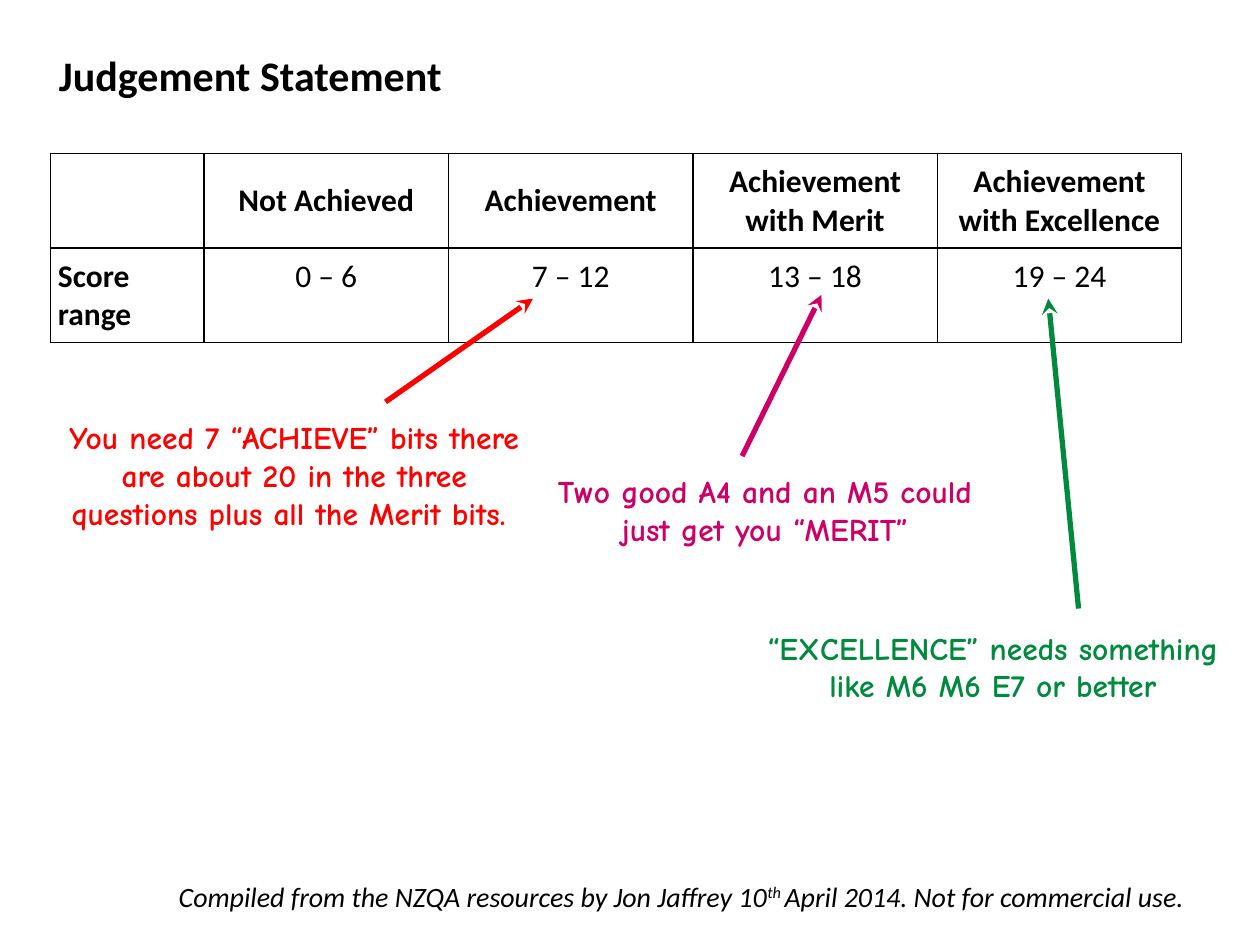
from lxml.etree import SubElement
from pptx import Presentation
from pptx.dml.color import RGBColor
from pptx.enum.shapes import MSO_CONNECTOR
from pptx.enum.text import MSO_ANCHOR, PP_ALIGN
from pptx.oxml.ns import qn
from pptx.util import Inches, Pt

BLACK = "000000"
TITLE = "Judgement Statement"
GRADES = [
    ("", "Score range"),
    ("Not Achieved", "0 – 6"),
    ("Achievement", "7 – 12"),
    ("Achievement with Merit", "13 – 18"),
    ("Achievement with Excellence", "19 – 24"),
]
COLUMN_WIDTHS = [1.22] + [1.94] * 4
ROW_HEIGHT = 0.74
# text, colour, text box, arrow start, arrow tip
COMMENTS = [
    ("You need 7 “ACHIEVE” bits there are about 20 in the three questions plus all the Merit bits. ",
     "FF0000", (0.35, 3.27, 3.97, 1.31), (3.06, 3.19), (4.23, 2.37)),
    ("Two good A4 and an M5 could just get you “MERIT”",
     "CC0066", (4.3, 3.7, 3.54, 1.01), (5.89, 3.62), (6.52, 2.34)),
    ("“EXCELLENCE” needs something like M6 M6 E7 or better",
     "008A3E", (5.96, 4.94, 3.84, 1.01), (8.56, 4.83), (8.32, 2.37)),
]
# text, superscript
CREDIT = [
    ("Compiled from the NZQA resources by Jon Jaffrey 10", False),
    ("th ", True),
    ("April 2014. Not for commercial use.", False),
]


def rgb(color):
    return RGBColor.from_string(color)


def add_run(p, text, size, color=BLACK, font="Calibri", bold=False, italic=False):
    r = p.add_run()
    r.text = text
    f = r.font
    f.name, f.size, f.bold, f.italic = font, Pt(size), bold, italic
    f.color.rgb = rgb(color)
    return r


def add_text_box(s, box, wrap=True):
    tf = s.shapes.add_textbox(*map(Inches, box)).text_frame
    tf.word_wrap = wrap
    return tf


def add_arrow(s, start, tip, color):
    line = s.shapes.add_connector(MSO_CONNECTOR.STRAIGHT, *map(Inches, start + tip))
    line.line.color.rgb = rgb(color)
    line.line.width = Pt(3)
    SubElement(line.line._get_or_add_ln(), qn("a:tailEnd"), type="stealth")
    SubElement(line._element.spPr, qn("a:effectLst"))


def style_cell(cell):
    """Give the cell thin black borders, no fill and narrow margins."""
    tcPr = cell._tc.get_or_add_tcPr()
    for side in ("lnL", "lnR", "lnT", "lnB"):
        ln = SubElement(tcPr, qn(f"a:{side}"), w=str(Pt(1)))
        fill = SubElement(ln, qn("a:solidFill"))
        SubElement(fill, qn("a:srgbClr"), val=BLACK)
    cell.fill.background()
    cell.margin_left = cell.margin_right = Inches(0.06)
    cell.margin_top = cell.margin_bottom = Inches(0.07)


def add_score_table(s):
    table = s.shapes.add_table(2, len(GRADES), Inches(0.4), Inches(1.22),
                               Inches(sum(COLUMN_WIDTHS)), Inches(2 * ROW_HEIGHT)).table
    table.first_row = table.horz_banding = False
    for row in table.rows:
        row.height = Inches(ROW_HEIGHT)
    for col, (texts, width) in enumerate(zip(GRADES, COLUMN_WIDTHS)):
        table.columns[col].width = Inches(width)
        for row, text in enumerate(texts):
            cell = table.cell(row, col)
            style_cell(cell)
            heading = row == 0 or col == 0
            p = cell.text_frame.paragraphs[0]
            p.alignment = PP_ALIGN.LEFT if col == 0 else PP_ALIGN.CENTER
            if heading:
                cell.vertical_anchor = MSO_ANCHOR.MIDDLE
                p.space_before = Pt(12)
            if text:
                add_run(p, text, 18, bold=heading)


prs = Presentation()
prs.slide_width, prs.slide_height = Inches(10), Inches(7.5)
s = prs.slides.add_slide(prs.slide_layouts[6])

add_score_table(s)

tf = add_text_box(s, (0.37, 0.22, 3.27, 0.57), wrap=False)
tf.vertical_anchor = MSO_ANCHOR.MIDDLE
tf.margin_top, tf.margin_bottom = Inches(0.17), 0
add_run(tf.paragraphs[0], TITLE, 24, bold=True)

for text, color, box, start, tip in COMMENTS:
    p = add_text_box(s, box).paragraphs[0]
    p.alignment = PP_ALIGN.CENTER
    add_run(p, text, 18, color, "Comic Neue", bold=True)
    add_arrow(s, start, tip, color)

p = add_text_box(s, (1.32, 6.93, 8.28, 0.37)).paragraphs[0]
for text, superscript in CREDIT:
    r = add_run(p, text, 16, italic=True)
    if superscript:
        r.font._element.set("baseline", "30000")

prs.save("out.pptx")
